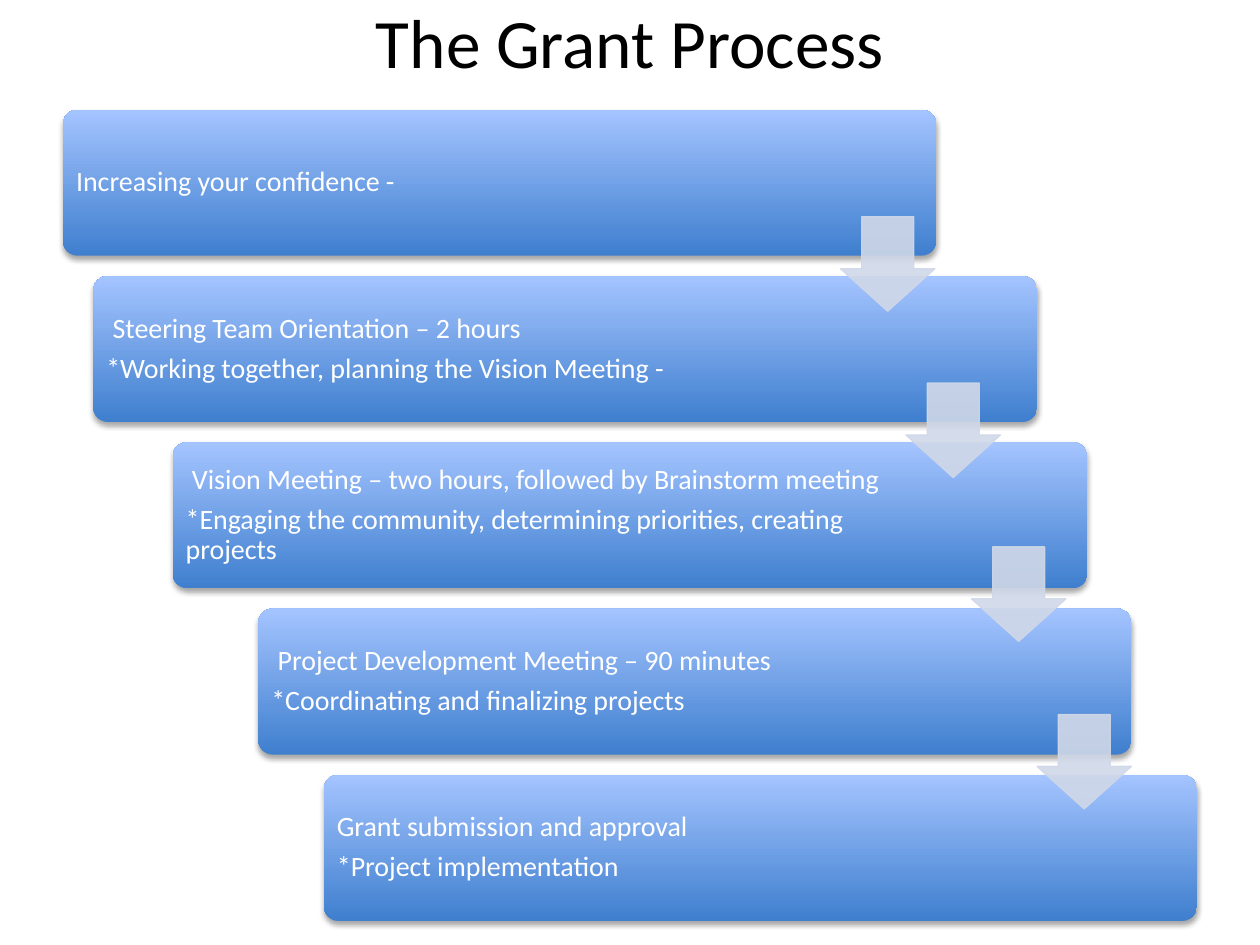
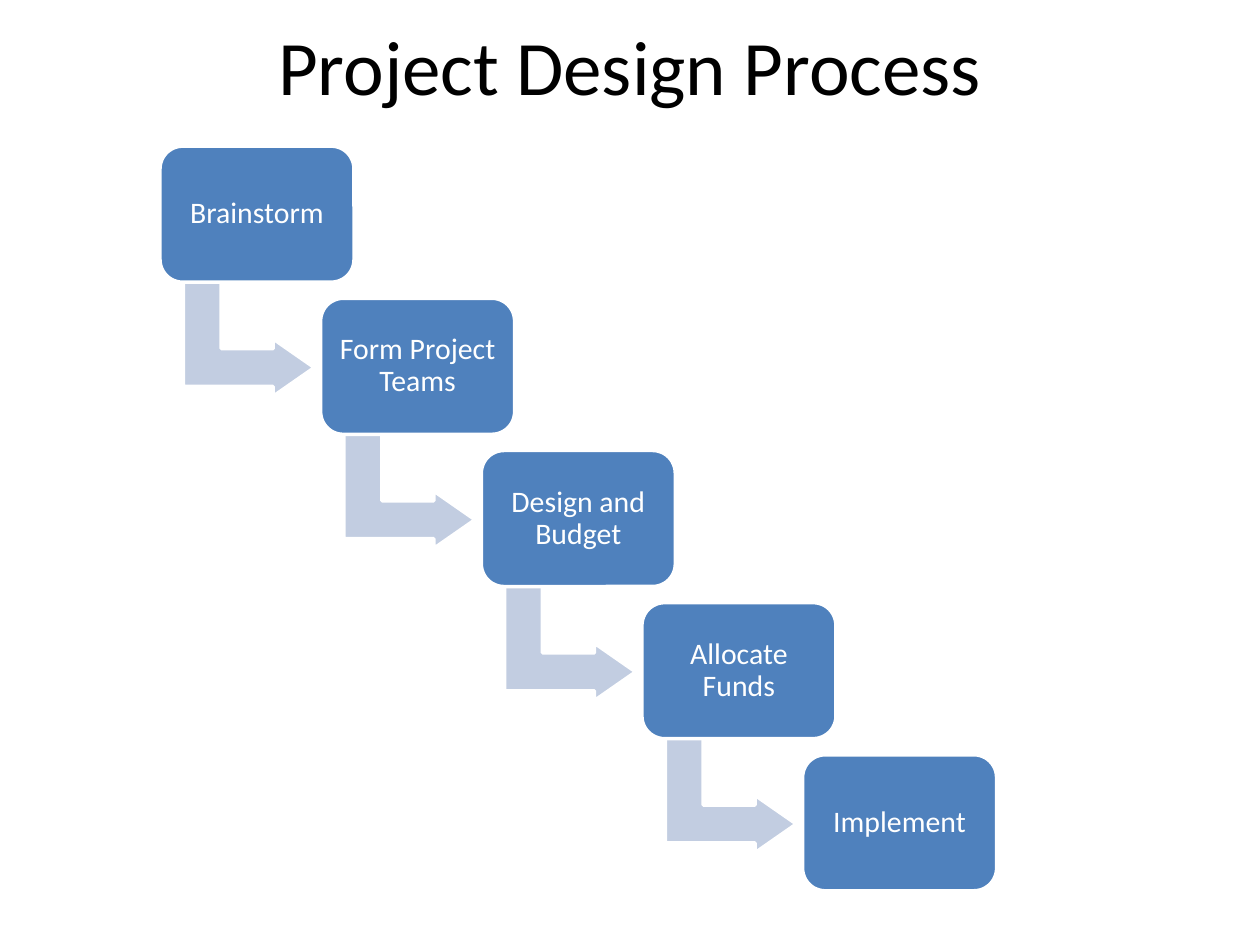
"""Builds two slides showing a meeting process and a project design process as descending steps."""
from dataclasses import dataclass
from typing import Optional

import lxml.etree
import pptx
import pptx.dml.color
import pptx.enum.dml
import pptx.enum.shapes
import pptx.enum.text
import pptx.oxml
import pptx.oxml.ns
import pptx.util

Inches = pptx.util.Inches
Pt = pptx.util.Pt
RGBColor = pptx.dml.color.RGBColor
MSO_SHAPE = pptx.enum.shapes.MSO_SHAPE
PP_ALIGN = pptx.enum.text.PP_ALIGN
qn = pptx.oxml.ns.qn

BLACK = RGBColor(0x00, 0x00, 0x00)
WHITE = RGBColor(0xFF, 0xFF, 0xFF)
DEEP_BLUE = RGBColor(0x3F, 0x7F, 0xCE)
SKY_BLUE = RGBColor(0xA4, 0xC4, 0xFF)
STEEL_BLUE = RGBColor(0x4F, 0x81, 0xBD)
PALE_ARROW = RGBColor(0xD0, 0xD8, 0xE8)
BENT_ARROW = RGBColor(0xC2, 0xCD, 0xE1)

FONT = "Calibri"
TEXT_INSET = 0.07


@dataclass(frozen=True)
class Meeting:
    """A bar of the meeting staircase and the top of the arrow leaving it."""

    left: float
    width: float
    lines: tuple[str, ...]
    arrow_top: Optional[float] = None


MEETINGS = (
    Meeting(0.5, 6.93, ("Increasing your confidence -",), 1.72),
    Meeting(0.74, 7.49, (" Steering Team Orientation – 2 hours",
                         "*Working together, planning the Vision Meeting -"), 3.04),
    Meeting(1.37, 7.26, (" Vision Meeting – two hours, followed by Brainstorm meeting",
                         "*Engaging the community, determining priorities, creating projects"), 4.34),
    Meeting(2.05, 6.93, (" Project Development Meeting – 90 minutes",
                         "*Coordinating and finalizing projects"), 5.67),
    Meeting(2.57, 6.93, ("Grant submission and approval", "*Project implementation")),
)
DESIGN_STAGES = ("Brainstorm", "Form Project Teams", "Design and Budget",
                 "Allocate Funds", "Implement")


def write_text(frame, lines, *, size: float, color: RGBColor = WHITE,
               align=PP_ALIGN.LEFT, line_spacing: float = 0.9,
               space_after: float = 0.35) -> None:
    """Fill a text frame, one paragraph per line, with spacing relative to the font size."""
    frame.word_wrap = True
    frame.auto_size = pptx.enum.text.MSO_AUTO_SIZE.NONE
    frame.vertical_anchor = pptx.enum.text.MSO_ANCHOR.MIDDLE
    frame.text = "\n".join(lines)
    for paragraph in frame.paragraphs:
        paragraph.alignment = align
        paragraph.line_spacing = line_spacing
        paragraph.space_after = Pt(size * space_after)
        paragraph.font.name = FONT
        paragraph.font.size = Pt(size)
        paragraph.font.color.rgb = color


def set_insets(frame, right: float = TEXT_INSET) -> None:
    """Give a frame the shared insets, with an optional wider right one."""
    frame.margin_left = frame.margin_top = frame.margin_bottom = Inches(TEXT_INSET)
    frame.margin_right = Inches(right)


def add_titled_slide(deck, title: str, height: float, size: float):
    """Add a title-only slide with its title across the top."""
    slide = deck.slides.add_slide(deck.slide_layouts[5])
    heading = slide.shapes.title
    heading.left, heading.top = Inches(0.5), Inches(0)
    heading.width, heading.height = Inches(9), Inches(height)
    write_text(heading.text_frame, (title,), size=size, color=BLACK,
               align=PP_ALIGN.CENTER, line_spacing=1.0, space_after=0)
    return slide


def add_figure(slide, preset, left: float, top: float, width: float, height: float, *,
               fill: Optional[RGBColor] = None, outline: Optional[RGBColor] = None,
               outline_width: float = 2, adjustments: tuple[float, ...] = ()):
    """Add a shadowless preset shape with the given fill and outline."""
    figure = slide.shapes.add_shape(preset, Inches(left), Inches(top),
                                    Inches(width), Inches(height))
    figure.shadow.inherit = False
    for index, value in enumerate(adjustments):
        figure.adjustments[index] = value
    if fill is not None:
        figure.fill.solid()
        figure.fill.fore_color.rgb = fill
    if outline is None:
        figure.line.fill.background()
    else:
        figure.line.color.rgb = outline
        figure.line.width = Pt(outline_width)
    return figure


def add_alpha(color_element, percent: int) -> None:
    """Set the opacity of a colour element."""
    lxml.etree.SubElement(color_element, qn("a:alpha")).set("val", str(percent * 1000))


def shade_bar(bar) -> None:
    """Give a bar its vertical gradient and soft shadow below."""
    bar.fill.gradient()
    bar.fill.gradient_angle = 90
    for stop, color in zip(bar.fill.gradient_stops, (DEEP_BLUE, SKY_BLUE)):
        stop.color.rgb = color
    effects = bar.element.spPr.find(qn("a:effectLst"))
    shadow = lxml.etree.SubElement(effects, qn("a:outerShdw"), {
        "blurRad": str(Pt(3.1)), "dist": str(Pt(1.8)),
        "dir": "5400000", "rotWithShape": "0"})
    shade = lxml.etree.SubElement(shadow, qn("a:srgbClr"), {"val": str(BLACK)})
    add_alpha(shade, 35)


def build_meeting_process(deck) -> None:
    """Draw the meeting bars, then the translucent arrows over them."""
    slide = add_titled_slide(deck, "The Grant Process", 0.64, 39.6)
    for row, meeting in enumerate(MEETINGS):
        bar = add_figure(slide, MSO_SHAPE.ROUNDED_RECTANGLE, meeting.left,
                         0.87 + 1.32 * row, meeting.width, 1.16, adjustments=(0.1,))
        shade_bar(bar)
        set_insets(bar.text_frame, right=1.4)
        write_text(bar.text_frame, meeting.lines, size=16)
    for row, meeting in enumerate(MEETINGS[:-1]):
        arrow = add_figure(slide, MSO_SHAPE.DOWN_ARROW, 6.67 + 0.52 * row,
                           meeting.arrow_top, 0.75, 0.75, fill=PALE_ARROW,
                           outline=PALE_ARROW, outline_width=0.75,
                           adjustments=(0.55, 0.45))
        for color_element in arrow.element.spPr.iter(qn("a:srgbClr")):
            add_alpha(color_element, 90)


def build_design_process(deck) -> None:
    """Draw the design stages on a diagonal, joined by bent arrows."""
    slide = add_titled_slide(deck, "Project Design Process", 1.03, 44)
    last = len(DESIGN_STAGES) - 1
    step_across, step_down = (6.37 - 1.27) / last, (5.99 - 1.16) / last
    for index, stage in enumerate(DESIGN_STAGES):
        left, top = 1.27 + step_across * index, 1.16 + step_down * index
        if index < last:
            arrow = add_figure(slide, MSO_SHAPE.BENT_UP_ARROW, left + 0.25, top + 1.01,
                               0.91, 1.04, fill=BENT_ARROW, outline=WHITE,
                               adjustments=(0.33, 0.25, 0.36))
            arrow.rotation = 90
        box = add_figure(slide, MSO_SHAPE.ROUNDED_RECTANGLE, left, top, 1.54, 1.08,
                         fill=STEEL_BLUE, outline=WHITE)
        set_insets(box.text_frame)
        write_text(box.text_frame, (stage,), size=17, align=PP_ALIGN.CENTER)


def main() -> None:
    """Build and save the deck."""
    deck = pptx.Presentation()
    deck.slide_width, deck.slide_height = Inches(10), Inches(7.5)
    build_meeting_process(deck)
    build_design_process(deck)
    deck.save("out.pptx")


if __name__ == "__main__":
    main()
